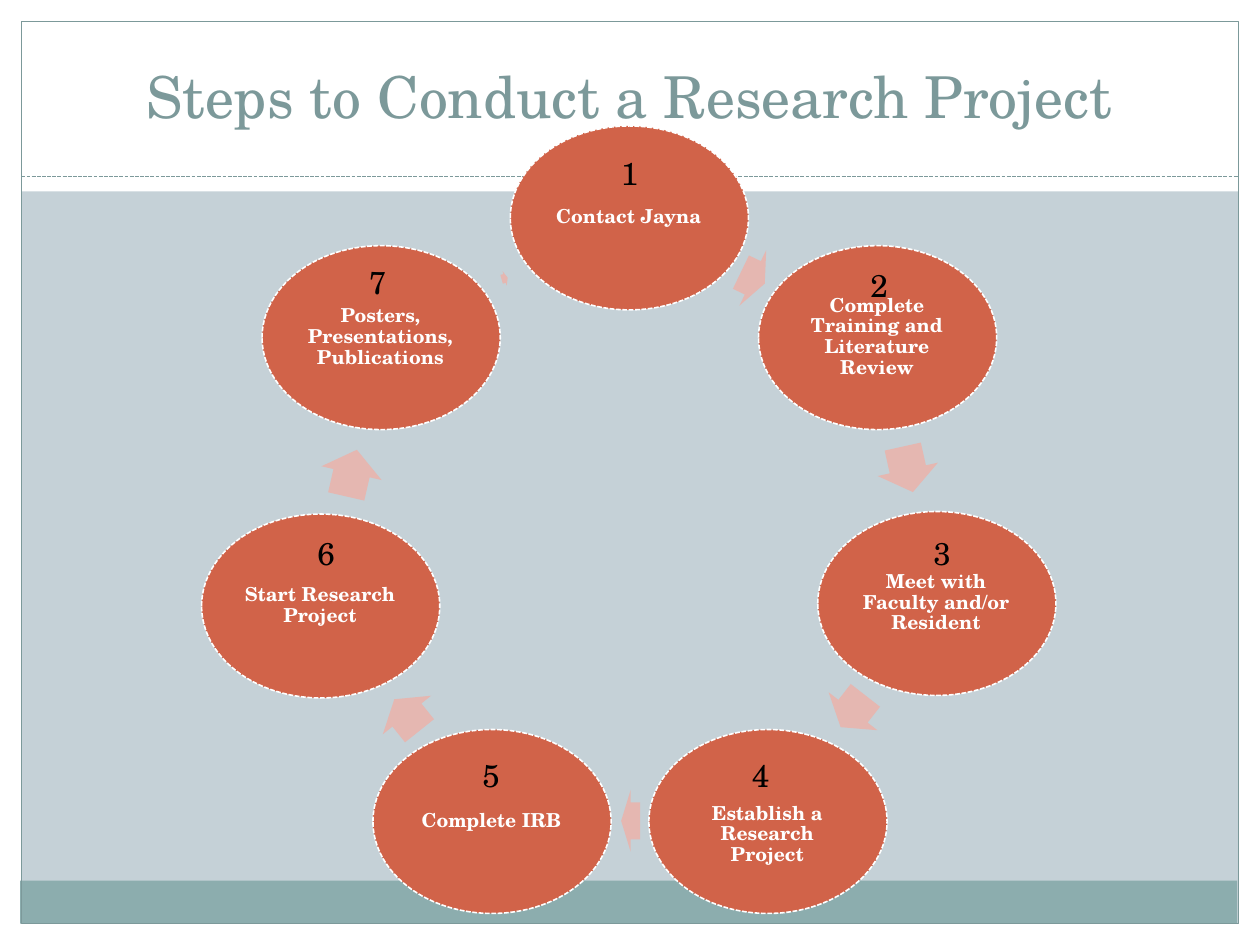
from dataclasses import dataclass

from lxml.etree import SubElement
from pptx import Presentation
from pptx.dml.color import RGBColor
from pptx.enum.dml import MSO_LINE
from pptx.enum.shapes import MSO_CONNECTOR, MSO_SHAPE
from pptx.enum.text import MSO_ANCHOR, PP_ALIGN
from pptx.oxml.ns import qn
from pptx.util import Emu, Pt

PX = 9144  # 100 px to the inch
FONT = "TeX Gyre Schola"
COLORS = {
    "background": "C5D1D7",
    "paper": "FFFFFF",
    "footer": "8CADAE",
    "frame": "7C999A",
    "step": "D16349",
    "arrow": "E5B7B1",
    "number": "000000",
}
STEP_WIDTH, STEP_HEIGHT = 189, 146
LABEL_WIDTH, LABEL_HEIGHT = 134, 103
NUMBER_WIDTH, NUMBER_HEIGHT = 33, 42


@dataclass(frozen=True)
class Box:
    left: int
    top: int
    width: int
    height: int

    def emu(self) -> list:
        return [px(n) for n in (self.left, self.top, self.width, self.height)]


@dataclass(frozen=True)
class Step:
    label: str
    left: int
    top: int
    number_left: int
    number_top: int
    arrow: Box
    arrow_angle: float
    label_drop: int = 0


STEPS = [
    Step("Contact Jayna", 405, 100, 483, 117, Box(587, 196, 21, 49), 25.7),
    Step("Complete Training and Literature Review", 602, 195, 681, 206,
         Box(702, 348, 37, 49), 77.5),
    Step("Meet with Faculty and/or Resident", 649, 406, 731, 419,
         Box(661, 540, 32, 49), 127.9),
    Step("Establish a Research Project", 515, 579, 587, 595,
         Box(493, 627, 15, 49), 180, label_drop=11),
    Step("Complete IRB", 296, 579, 373, 595, Box(307, 543, 32, 49), 231.4),
    Step("Start Research Project", 160, 408, 242, 419,
         Box(260, 351, 38, 49), 282.9),
    Step("Posters, Presentations, Publications", 208, 195, 283, 204,
         Box(398, 215, 5, 12), 344.2),
]


def px(length: int) -> Emu:
    return Emu(length * PX)


def color(name: str) -> RGBColor:
    return RGBColor.from_string(COLORS[name])


def draw_shape(page, kind, box: Box, fill: str = "", line: str = "",
               weight: float = 0.75, dash=None):
    shape = page.shapes.add_shape(kind, *box.emu())
    shape.shadow.inherit = False
    if fill:
        shape.fill.solid()
        shape.fill.fore_color.rgb = color(fill)
    else:
        shape.fill.background()
    if line:
        shape.line.color.rgb = color(line)
        shape.line.width = Pt(weight)
        if dash:
            shape.line.dash_style = dash
    else:
        shape.line.fill.background()
    return shape


def draw_text(page, text: str, box: Box, size: int, ink: str,
              align=PP_ALIGN.CENTER, anchor=MSO_ANCHOR.MIDDLE,
              bold: bool = False, spacing: float = 1.0, inset: int = 10) -> None:
    frame = page.shapes.add_textbox(*box.emu()).text_frame
    frame.word_wrap = True
    frame.vertical_anchor = anchor
    frame.margin_left = frame.margin_right = px(inset)
    frame.margin_top = frame.margin_bottom = px(inset // 2)
    para = frame.paragraphs[0]
    para.alignment = align
    para.line_spacing = spacing
    span = para.add_run()
    span.text = text
    span.font.name = FONT
    span.font.size = Pt(size)
    span.font.bold = bold
    span.font.color.rgb = color(ink)


def draw_page_frame(page) -> None:
    page.background.fill.solid()
    page.background.fill.fore_color.rgb = color("background")
    margins = [Box(0, 733, 1000, 17), Box(0, 0, 1000, 152),
               Box(0, 0, 17, 750), Box(983, 0, 17, 750)]
    for margin in margins:
        draw_shape(page, MSO_SHAPE.RECTANGLE, margin, "paper")
    draw_shape(page, MSO_SHAPE.RECTANGLE, Box(16, 699, 966, 34), "footer")
    draw_shape(page, MSO_SHAPE.RECTANGLE, Box(17, 17, 966, 716), line="frame")

    rule = page.shapes.add_connector(
        MSO_CONNECTOR.STRAIGHT, px(17), px(140), px(983), px(140))
    rule.line.color.rgb = color("frame")
    rule.line.width = Pt(0.75)
    rule.line.dash_style = MSO_LINE.SQUARE_DOT
    SubElement(rule._element.spPr, qn("a:effectLst"))


def draw_step(page, step: Step) -> None:
    """Draw the ellipse, its label and the arrow to the next step."""
    draw_shape(page, MSO_SHAPE.OVAL,
               Box(step.left, step.top, STEP_WIDTH, STEP_HEIGHT),
               "step", "paper", 0.9, MSO_LINE.SQUARE_DOT)
    label_box = Box(step.left + (STEP_WIDTH - LABEL_WIDTH) // 2,
                    step.top + (STEP_HEIGHT - LABEL_HEIGHT) // 2 + step.label_drop,
                    LABEL_WIDTH, LABEL_HEIGHT)
    draw_text(page, step.label, label_box, 11, "paper",
              bold=True, spacing=0.9, inset=2)
    arrow = draw_shape(page, MSO_SHAPE.RIGHT_ARROW, step.arrow, "arrow")
    arrow.adjustments[0] = 0.6
    arrow.adjustments[1] = 0.5
    arrow.rotation = step.arrow_angle


def main() -> None:
    deck = Presentation()
    deck.slide_width, deck.slide_height = px(1000), px(750)
    page = deck.slides.add_slide(deck.slide_layouts[6])
    draw_page_frame(page)
    draw_text(page, "Steps to Conduct a Research Project",
              Box(33, 25, 933, 83), 33, "frame", anchor=MSO_ANCHOR.BOTTOM)
    for step in STEPS:
        draw_step(page, step)
    for number, step in enumerate(STEPS, start=1):
        number_box = Box(step.number_left, step.number_top,
                         NUMBER_WIDTH, NUMBER_HEIGHT)
        draw_text(page, str(number), number_box, 18, "number",
                  align=PP_ALIGN.LEFT, anchor=MSO_ANCHOR.TOP)
    deck.save("out.pptx")


if __name__ == "__main__":
    main()
